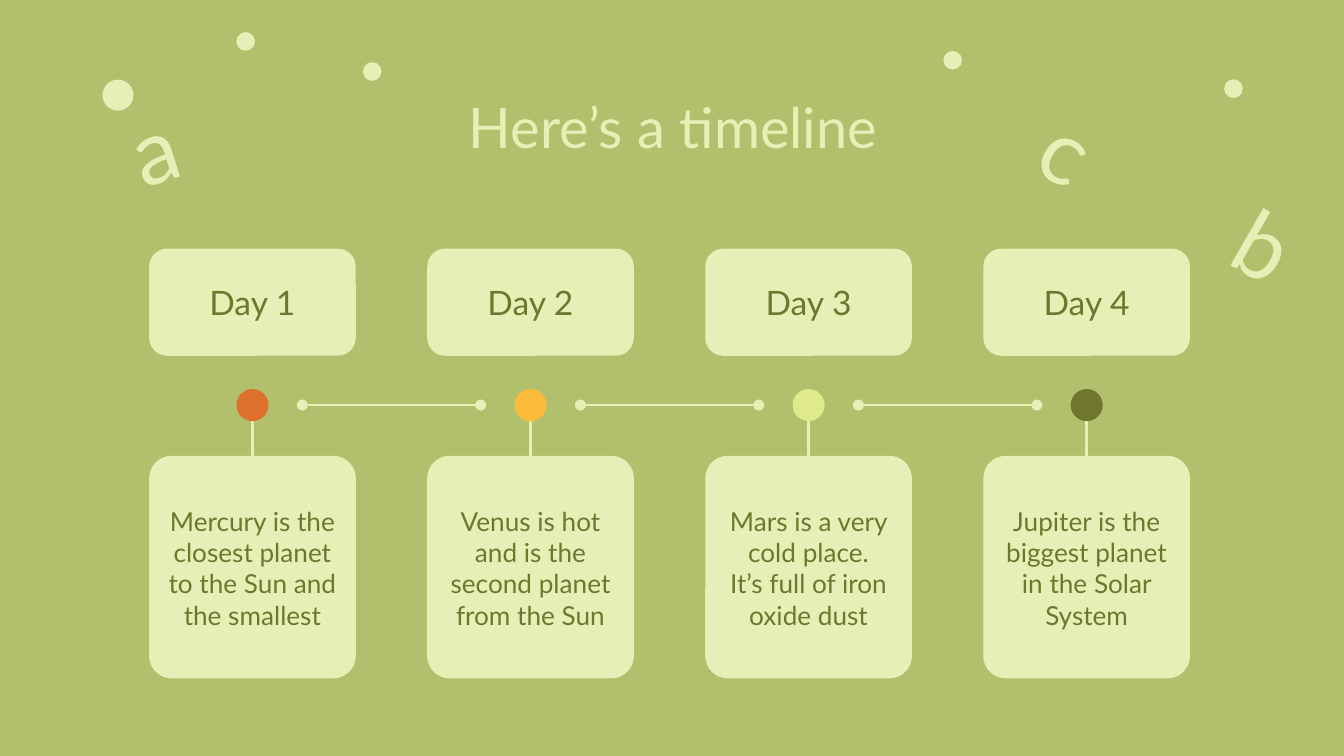
from dataclasses import dataclass

from lxml import etree
from pptx import Presentation
from pptx.dml.color import RGBColor
from pptx.enum.shapes import MSO_CONNECTOR, MSO_SHAPE
from pptx.enum.text import MSO_ANCHOR, PP_ALIGN
from pptx.oxml.ns import qn
from pptx.util import Pt

CENTER, LEFT = PP_ALIGN.CENTER, PP_ALIGN.LEFT
MIDDLE = MSO_ANCHOR.MIDDLE
OVAL, ROUNDED = MSO_SHAPE.OVAL, MSO_SHAPE.ROUNDED_RECTANGLE
STRAIGHT = MSO_CONNECTOR.STRAIGHT
CARD_TOP_SITE = 0


@dataclass(frozen=True)
class Theme:
    """Colours, font and type sizes of the slide."""
    background: str = "B2BF6D"
    pale: str = "E6EFB5"
    ink: str = "6F772E"
    font: str = "Lato"
    title: float = 30
    day: float = 18
    body: float = 14
    letter: float = 48


THEME = Theme()

DAYS = [
    ("Day 1", ["Mercury is the closest planet to the Sun and the smallest"], "DD702D"),
    ("Day 2", ["Venus is hot and is the second planet from the Sun"], "FCBB3B"),
    ("Day 3", ["Mars is a very cold place.", "It’s full of iron oxide dust"], "DEEA8B"),
    ("Day 4", ["Jupiter is the biggest planet in the Solar System"], "6E772D"),
]
LETTERS = [("a", 63.4, 58.3, -17.4), ("b", 657.4, 108, 29.9), ("c", 553.7, 58.3, 29.9)]
DOTS = [(126.6, 17.2, 10), (194.4, 33.3, 10), (54.9, 42.7, 16.6),
        (655.8, 42.5, 10), (505.4, 27.3, 10)]


def add_filled(slide, kind, box, color, corner=None):
    """Add a borderless shape of one colour."""
    shape = slide.shapes.add_shape(kind, *map(Pt, box))
    shape.shadow.inherit = False
    shape.fill.solid()
    shape.fill.fore_color.rgb = RGBColor.from_string(color)
    shape.line.fill.background()
    if corner is not None:
        shape.adjustments[0] = corner
    return shape


def add_text(slide, box, lines, size, color, alignment=CENTER):
    """Add a vertically centred text box with one paragraph per line."""
    shape = slide.shapes.add_textbox(*map(Pt, box))
    frame = shape.text_frame
    frame_format = {"word_wrap": True, "vertical_anchor": MIDDLE}
    frame_format.update({f"margin_{side}": Pt(7.2)
                         for side in ("left", "top", "right", "bottom")})
    for name, value in frame_format.items():
        setattr(frame, name, value)
    frame.text = "\n".join(lines)
    for paragraph in frame.paragraphs:
        paragraph.alignment = alignment
        for name, value in {"name": THEME.font, "size": Pt(size)}.items():
            setattr(paragraph.font, name, value)
        paragraph.font.color.rgb = RGBColor.from_string(color)
    return shape


def add_line(slide, start, end, oval_ends=False):
    """Add a pale straight connector, with round ends on request."""
    connector = slide.shapes.add_connector(STRAIGHT, *map(Pt, (*start, *end)))
    connector.line.width = Pt(1.5)
    connector.line.color.rgb = RGBColor.from_string(THEME.pale)
    properties = connector.element.spPr
    if oval_ends:
        outline = properties.find(qn("a:ln"))
        for tag in ("a:headEnd", "a:tailEnd"):
            etree.SubElement(outline, qn(tag), type="oval")
    etree.SubElement(properties, qn("a:effectLst"))
    return connector


def add_decoration(slide):
    """Scatter the dots and tilted letters around the title."""
    for left, top, diameter in DOTS:
        add_filled(slide, OVAL, (left, top, diameter, diameter), THEME.pale)
    for letter, left, top, angle in LETTERS:
        box = (left, top, 35.3, 42.5)
        shape = add_text(slide, box, [letter], THEME.letter, THEME.pale, LEFT)
        shape.rotation = angle


def add_day(slide, box, day, lines, color):
    """Place a day card, its marker and its description card in the box."""
    left, top, width, height = box
    center, axis = left + width / 2, top + 83.8
    day_height, body_height, diameter = 57.4, 119.2, 17.2
    body_top = top + height - body_height
    add_filled(slide, ROUNDED, (left, top, width, day_height), THEME.pale, 0.167)
    add_text(slide, (center - 67.3, top + 5.7, 134.6, 46),
             [day], THEME.day, THEME.ink)
    card = add_filled(slide, ROUNDED, (left, body_top, width, body_height),
                      THEME.pale, 0.109)
    stem = add_line(slide, (center, axis), (center, body_top))
    stem.end_connect(card, CARD_TOP_SITE)
    add_filled(slide, OVAL, (center - diameter / 2, axis - diameter / 2,
                             diameter, diameter), color)
    add_text(slide, (center - 52.2, body_top + 17, 104.4, 86),
             lines, THEME.body, THEME.ink)


def add_timeline(slide, box):
    """Spread the days evenly over the box and link neighbouring markers."""
    left, top, width, height = box
    card_width, link_gap = 110.7, 26.7
    pitch = (width - card_width) / (len(DAYS) - 1)
    axis = top + 83.8
    for index, (day, lines, color) in enumerate(DAYS):
        day_left = left + index * pitch
        add_day(slide, (day_left, top, card_width, height), day, lines, color)
        if index < len(DAYS) - 1:
            center = day_left + card_width / 2
            add_line(slide, (center + link_gap, axis),
                     (center + pitch - link_gap, axis), oval_ends=True)


def main():
    """Build and save the timeline slide."""
    presentation = Presentation()
    presentation.slide_width, presentation.slide_height = Pt(720), Pt(405)
    slide = presentation.slides.add_slide(presentation.slide_layouts[6])
    slide.background.fill.solid()
    slide.background.fill.fore_color.rgb = RGBColor.from_string(THEME.background)
    add_text(slide, (53.9, 42, 613.4, 51), ["Here’s a timeline"],
             THEME.title, THEME.pale)
    add_timeline(slide, (79.9, 133.2, 557.6, 230.2))
    add_decoration(slide)
    presentation.save("out.pptx")


if __name__ == "__main__":
    main()
